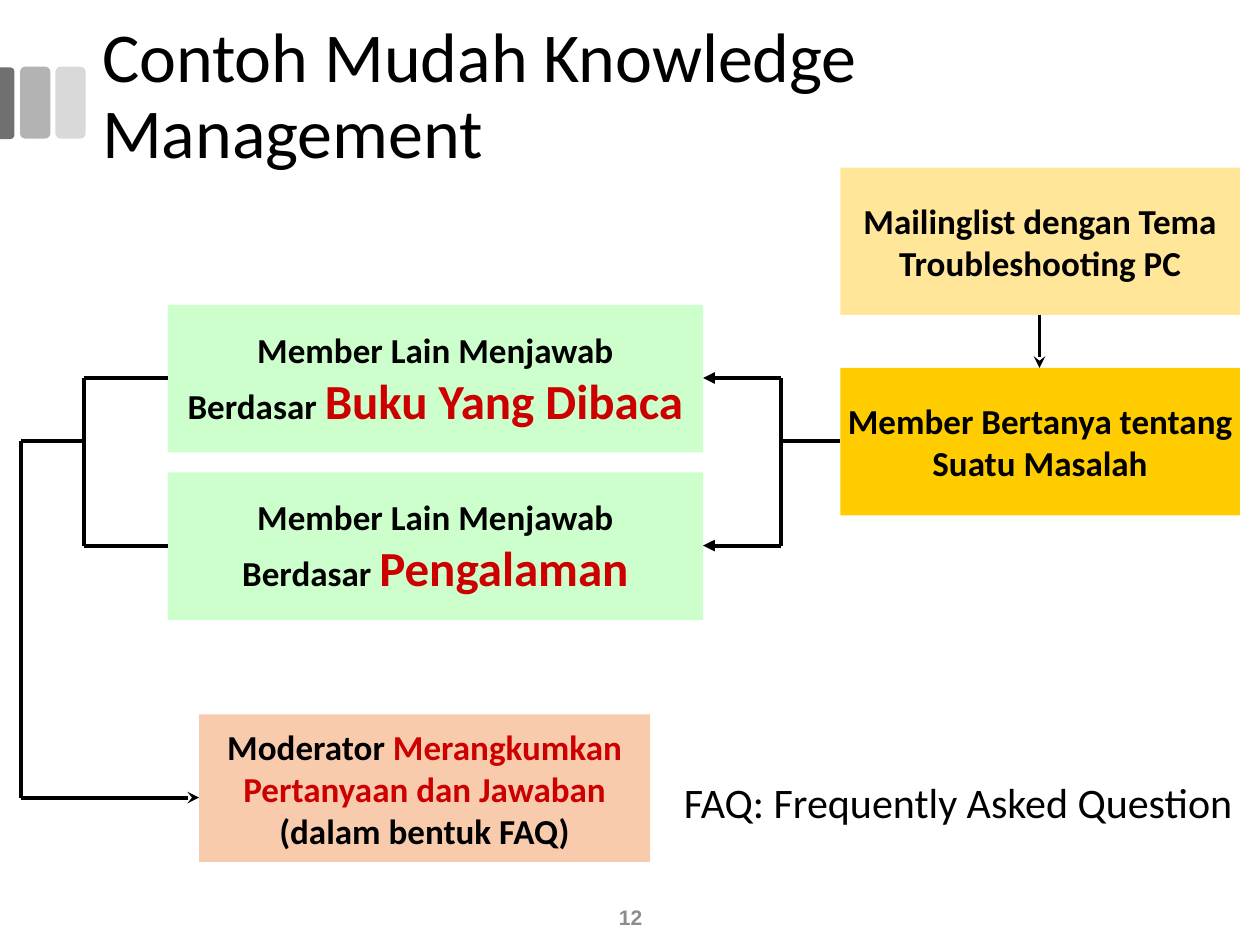
from dataclasses import dataclass

from lxml.etree import SubElement
from pptx import Presentation
from pptx.dml.color import RGBColor
from pptx.enum.shapes import MSO_CONNECTOR as Connector, MSO_SHAPE as Shape
from pptx.enum.text import MSO_ANCHOR as Anchor, MSO_AUTO_SIZE as AutoSize, PP_ALIGN as Align
from pptx.oxml.ns import qn
from pptx.util import Inches, Pt


@dataclass(frozen=True)
class Theme:
    font: str = "Calibri"
    number_font: str = "Arial"
    black: str = "000000"
    red: str = "CC0000"
    grey: str = "8C8C8C"
    tabs: tuple = ("D9D9D9", "B3B3B3", "707070")
    topic: str = "FFE699"
    question: str = "FFCC00"
    answer: str = "CCFFCC"
    summary: str = "F8CBAD"
    title: int = 40
    large: int = 28
    note: int = 24
    body: int = 20
    small: int = 12
    line: float = 2.25


theme = Theme()


def write(para, text, size, color=theme.black, bold=False, font=theme.font):
    """Add text to the paragraph; each newline becomes a line break."""
    for index, piece in enumerate(text.split("\n")):
        if index:
            para.add_line_break()
        if piece:
            span = para.add_run()
            span.text = piece
            span.font.name, span.font.size, span.font.bold = font, Pt(size), bold
            span.font.color.rgb = RGBColor.from_string(color)


def add_block(kind, left, top, width, height, fill):
    block = page.shapes.add_shape(kind, Inches(left), Inches(top), Inches(width), Inches(height))
    block.shadow.inherit = False
    block.fill.solid()
    block.fill.fore_color.rgb = RGBColor.from_string(fill)
    block.line.fill.background()
    return block


deck = Presentation()
deck.slide_width, deck.slide_height = Inches(10), Inches(7.5)
page = deck.slides.add_slide(deck.slide_layouts[5])

# Grey tabs at the left edge
for left, color in zip((0.44, 0.16), theme.tabs):
    add_block(Shape.ROUNDED_RECTANGLE, left, 0.53, 0.24, 0.57, color)
edge_tab = add_block(Shape.ROUND_2_SAME_RECTANGLE, -0.23, 0.76, 0.57, 0.12, theme.tabs[2])
edge_tab.adjustments[0] = 0.29
edge_tab.rotation = 90

# Title
title = page.shapes.title
title.left, title.top, title.width, title.height = Inches(0.71), Inches(0.36), Inches(9.17), Inches(0.83)
title.text_frame.auto_size = AutoSize.NONE
title.text_frame.vertical_anchor = Anchor.MIDDLE
heading = title.text_frame.paragraphs[0]
heading.alignment = Align.LEFT
heading.line_spacing = 0.9
write(heading, "Contoh Mudah Knowledge Management", theme.title)

# Process steps: left, top, width, fill, paragraphs of (text, size, color)
plain = (theme.body, theme.black)
marked = (theme.body, theme.red)
strong = (theme.large, theme.red)
answer_start = ("Member Lain Menjawab\nBerdasar ", *plain)
steps = [
    (6.67, 1.33, 3.17, theme.topic,
     [[("Mailinglist dengan Tema", *plain)], [("Troubleshooting PC", *plain)]]),
    (6.67, 2.92, 3.17, theme.question,
     [[("Member Bertanya tentang\nSuatu Masalah", *plain)]]),
    (1.33, 3.75, 4.25, theme.answer, [[answer_start, ("Pengalaman", *strong)]]),
    (1.33, 2.42, 4.25, theme.answer, [[answer_start, ("Buku Yang Dibaca", *strong)]]),
    (1.58, 5.67, 3.58, theme.summary,
     [[("Moderator ", *plain), ("Merangkumkan", *marked)],
      [("Pertanyaan dan Jawaban\n", *marked), ("(dalam bentuk FAQ)", *plain)]]),
]
for left, top, width, fill, paragraphs in steps:
    frame = add_block(Shape.RECTANGLE, left, top, width, 1.17, fill).text_frame
    frame.word_wrap = False
    frame.vertical_anchor = Anchor.MIDDLE
    for index, spans in enumerate(paragraphs):
        para = frame.add_paragraph() if index else frame.paragraphs[0]
        para.alignment = Align.CENTER
        for text, size, color in spans:
            write(para, text, size, color, bold=True)

# Flow lines: start, end, arrowhead
book, question, experience, summary = 3, 3.5, 4.33, 6.33
fork, join, outer = 6.2, 0.67, 0.17
flows = [
    ((8.25, 2.5), (8.25, 2.92), "stealth"),
    ((6.67, question), (fork, question), None),
    ((fork, book), (fork, experience), None),
    ((join, book), (join, experience), None),
    ((join, question), (outer, question), None),
    ((outer, question), (outer, summary), None),
    ((outer, summary), (1.58, summary), "stealth"),
]
for row in (book, experience):
    flows.append(((fork, row), (5.58, row), "triangle"))
    flows.append(((1.33, row), (join, row), None))
for start, end, head in flows:
    flow = page.shapes.add_connector(Connector.STRAIGHT, *map(Inches, start + end))
    flow.line.width = Pt(theme.line)
    flow.line.color.rgb = RGBColor.from_string(theme.black)
    if head:
        SubElement(flow.line._get_or_add_ln(), qn("a:tailEnd"), type=head)
    SubElement(flow._element.spPr, qn("a:effectLst"))

# Note and page number
note = page.shapes.add_textbox(Inches(5.33), Inches(6.11), Inches(4.58), Inches(0.51)).text_frame
note.word_wrap = True
write(note.paragraphs[0], "FAQ: Frequently Asked Question", theme.note)

number = page.shapes.add_textbox(Inches(3.88), Inches(7.08), Inches(2.25), Inches(0.4)).text_frame
number.word_wrap = True
number.vertical_anchor = Anchor.MIDDLE
number.paragraphs[0].alignment = Align.CENTER
write(number.paragraphs[0], "12", theme.small, theme.grey, True, theme.number_font)

deck.save("out.pptx")
